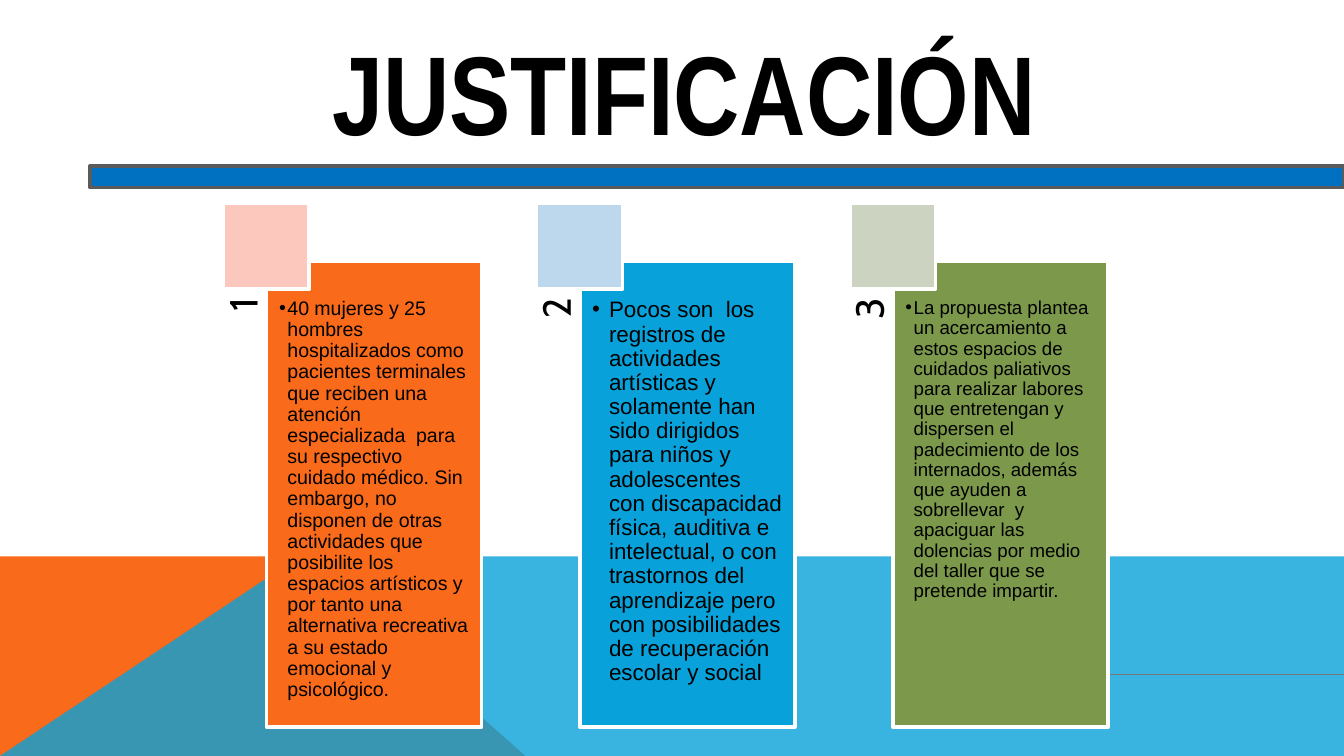
from dataclasses import dataclass

from pptx import Presentation
from pptx.dml.color import RGBColor
from pptx.enum.shapes import MSO_CONNECTOR, MSO_SHAPE
from pptx.enum.text import MSO_ANCHOR, MSO_AUTO_SIZE, PP_ALIGN
from pptx.oxml.ns import qn
from pptx.oxml.xmlchemy import OxmlElement
from pptx.util import Pt


@dataclass
class Card:
    text: str
    size: float
    indent: float
    fill: str
    tint: str


CARDS = [
    Card("40 mujeres y 25 hombres hospitalizados como pacientes terminales que "
         "reciben una atención especializada  para su respectivo cuidado médico. "
         "Sin embargo, no disponen de otras actividades que posibilite los espacios "
         "artísticos y por tanto una alternativa recreativa a su estado emocional "
         "y psicológico.", 10.5, 4.5, "F96A1B", "FCC7BD"),
    Card("Pocos son  los registros de actividades artísticas y  solamente han sido "
         "dirigidos para niños y adolescentes con discapacidad física, auditiva e "
         "intelectual, o con trastornos del aprendizaje pero con posibilidades de "
         "recuperación escolar y social", 12, 9, "08A1D9", "BDD7ED"),
    Card("La propuesta plantea un acercamiento a estos espacios de cuidados "
         "paliativos para realizar labores que entretengan y dispersen el "
         "padecimiento de los internados, además que ayuden a sobrellevar  y "
         "apaciguar las dolencias por medio del taller que se pretende impartir.",
         10, 4.5, "7C984A", "CCD4C1"),
]
WIDE, HIGH = 720, 405
PITCH = 167.75
TALL = 249.85


def color(code: str) -> RGBColor:
    return RGBColor.from_string(code)


def apply(item, values: dict) -> None:
    for name, value in values.items():
        setattr(item, name, value)


def place(shape, left: float, top: float, width: float, height: float) -> None:
    apply(shape, {"left": Pt(left), "top": Pt(top),
                  "width": Pt(width), "height": Pt(height)})


def paint(shape, fill: str, line: str = "") -> None:
    shape.fill.solid()
    shape.fill.fore_color.rgb = color(fill)
    if line:
        shape.line.color.rgb = color(line)
        shape.line.width = Pt(2)
    else:
        shape.line.fill.background()


def box(slide, left: float, top: float, width: float, height: float,
        fill: str, line: str) -> None:
    shape = slide.shapes.add_shape(MSO_SHAPE.RECTANGLE, Pt(left), Pt(top),
                                   Pt(width), Pt(height))
    shape.shadow.inherit = False
    paint(shape, fill, line)


def band(slide, spots: list, fill: str, alpha: int = 100) -> None:
    """Draw a filled polygon, with its opacity in percent."""
    spots = [(Pt(x), Pt(y)) for x, y in spots]
    pen = slide.shapes.build_freeform(*spots[0], scale=1.0)
    pen.add_line_segments(spots[1:], close=True)
    shape = pen.convert_to_shape()
    shape.shadow.inherit = False
    paint(shape, fill)
    if alpha < 100:
        node = OxmlElement("a:alpha")
        node.set("val", str(alpha * 1000))
        shape.element.spPr.find(".//" + qn("a:srgbClr")).append(node)


def write(shape, text: str, face: str, size: float, align: PP_ALIGN,
          anchor: MSO_ANCHOR, pads: tuple, bold: bool = False,
          ratio: float = 0.9):
    """Fill the text frame; pads run left, top, right, bottom."""
    frame = shape.text_frame
    sides = ("left", "top", "right", "bottom")
    apply(frame, {f"margin_{side}": Pt(pad) for side, pad in zip(sides, pads)})
    apply(frame, {"text": text, "word_wrap": True, "vertical_anchor": anchor,
                  "auto_size": MSO_AUTO_SIZE.NONE})
    para = frame.paragraphs[0]
    apply(para, {"alignment": align, "line_spacing": ratio,
                 "space_before": Pt(0), "space_after": Pt(0)})
    font = para.runs[0].font
    apply(font, {"name": face, "size": Pt(size), "bold": bold})
    font.color.rgb = color("000000")
    return para


def bullet(para, indent: float) -> None:
    props = para._p.get_or_add_pPr()
    props.set("marL", str(Pt(indent)))
    props.set("indent", str(-Pt(indent)))
    mark = OxmlElement("a:buChar")
    mark.set("char", "•")
    props.append(mark)


def column(slide, index: int, card: Card, body) -> None:
    """Draw a numbered card with its corner square."""
    shift = index * PITCH
    label = slide.shapes.add_textbox(Pt(6.5 + shift), Pt(252.7),
                                     Pt(TALL), Pt(23))
    label.rotation = 270
    write(label, str(index + 1), "Cabin", 21, PP_ALIGN.RIGHT,
          MSO_ANCHOR.TOP, (0, 0, 20.2, 0))
    slide.shapes.element.append(body.element)
    place(body, 142.8 + shift, 139.7, 115.2, TALL)
    paint(body, card.fill, "FFFFFF")
    para = write(body, card.text, "Arial", card.size, PP_ALIGN.LEFT,
                 MSO_ANCHOR.TOP, (6.7, 20.2, 6.7, 6.7))
    bullet(para, card.indent)
    box(slide, 119.7 + shift, 108.9, 46, 46, card.tint, "FFFFFF")


def main() -> None:
    deck = Presentation()
    apply(deck, {"slide_width": Pt(WIDE), "slide_height": Pt(HIGH)})
    slide = deck.slides.add_slide(deck.slide_layouts.get_by_name("Comparison"))
    title, *bodies = list(slide.placeholders)[:5]
    spare = bodies.pop().element
    spare.getparent().remove(spare)

    top, peak = 298, 160.6
    band(slide, [(0, HIGH), (0, top), (peak, top), (281.5, HIGH)], "F96A1B")
    band(slide, [(0, HIGH), (peak, top), (WIDE, top), (WIDE, HIGH)],
         "08A1D9", 80)

    slide.shapes.element.append(title.element)
    place(title, 70.5, 32.4, 592, 32.4)
    write(title, "JUSTIFICACIÓN", "Arial Narrow", 60, PP_ALIGN.CENTER,
          MSO_ANCHOR.MIDDLE, (7.2, 3.6, 7.2, 3.6), True, 1.0)

    rule = slide.shapes.add_connector(MSO_CONNECTOR.STRAIGHT, Pt(479),
                                      Pt(361.3), Pt(WIDE), Pt(361.3))
    rule.line.color.rgb = color("76787B")
    rule.line.width = Pt(0.75)
    rule.element.spPr.append(OxmlElement("a:effectLst"))
    box(slide, 48.2, 89, WIDE - 48.2, 11.5, "0070C0", "5A5B5D")

    for index, (card, body) in enumerate(zip(CARDS, bodies)):
        column(slide, index, card, body)
    deck.save("out.pptx")


if __name__ == "__main__":
    main()
